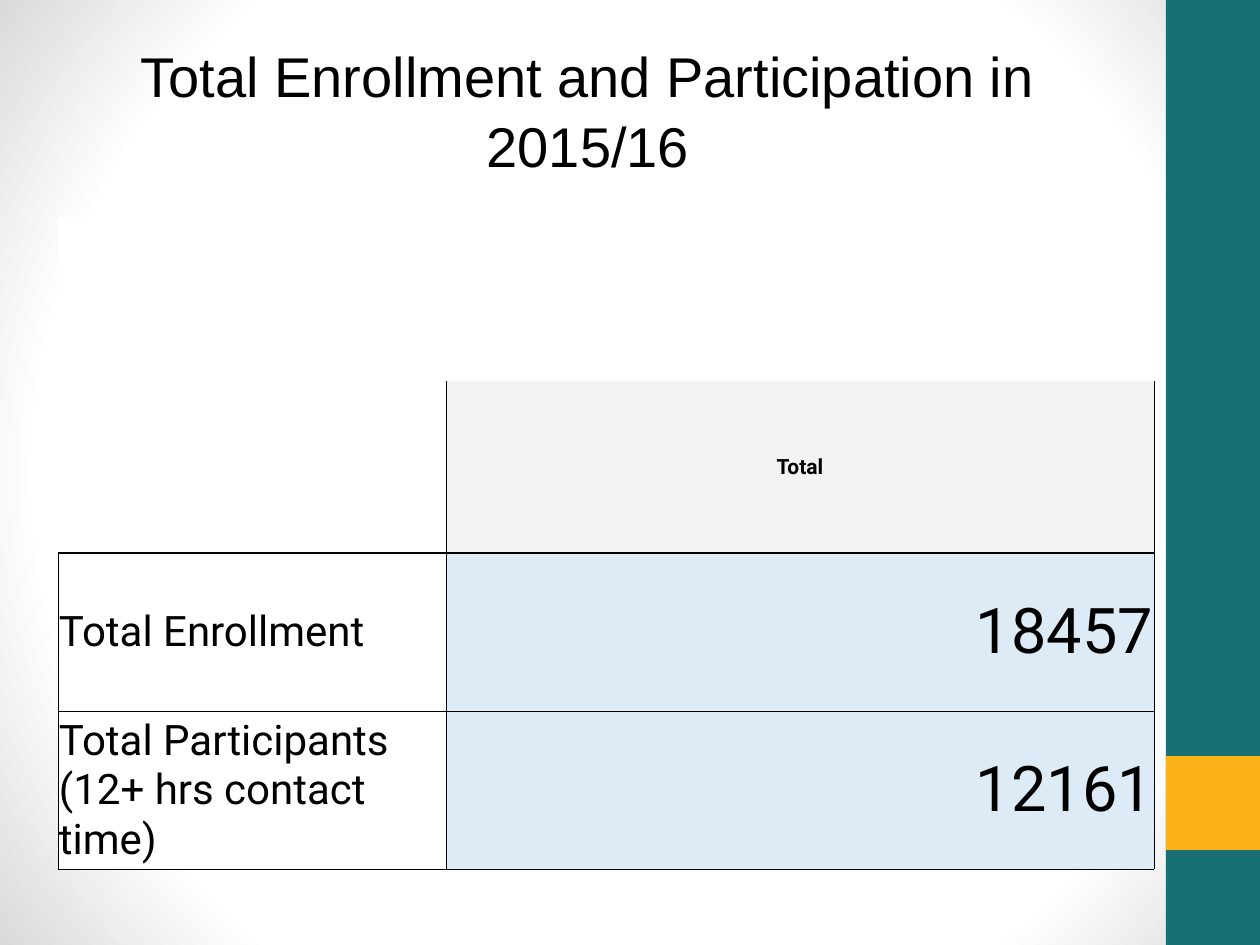
from dataclasses import dataclass

from lxml import etree
from pptx import Presentation
from pptx import util as u
from pptx.dml.color import RGBColor
from pptx.enum import shapes, text
from pptx.oxml import parse_xml
from pptx.oxml.ns import nsdecls, qn

PX = u.Inches(1) // 126
COLORS = {
    "teal": "187072",
    "amber": "FBB319",
    "white": "FFFFFF",
    "edge": "DADADA",
    "black": "000000",
    "header": "F2F2F2",
    "value": "DDEBF7",
}
COLUMN_WIDTHS = (388, 708)
ROW_HEIGHTS = (164, 172, 158, 158)
BORDER_TAGS = {"l": "a:lnL", "r": "a:lnR", "t": "a:lnT", "b": "a:lnB"}
THIN = {"l": 0.5, "r": 0.5, "t": 0.5, "b": 0.5}
UNDER_HEADER = {**THIN, "t": 1}


@dataclass
class Band:
    top: int
    height: int
    color: str


@dataclass
class Entry:
    row: int
    column: int
    color: str
    borders: dict[str, float]
    wording: str = ""
    size: int = 12
    align: text.PP_ALIGN = text.PP_ALIGN.LEFT
    bold: bool = False


BANDS = [Band(0, 945, "teal"), Band(756, 94, "amber")]
ENTRIES = [
    Entry(0, 0, "white", {}),
    Entry(0, 1, "white", {}),
    Entry(1, 0, "white", {"r": 0.5, "b": 1}),
    Entry(1, 1, "header", {"l": 0.5, "r": 0.5, "b": 1}, "Total", 12,
          text.PP_ALIGN.CENTER, True),
    Entry(2, 0, "white", UNDER_HEADER, "Total Enrollment", 24),
    Entry(2, 1, "value", UNDER_HEADER, "18457", 36, text.PP_ALIGN.RIGHT),
    Entry(3, 0, "white", THIN, "Total Participants (12+ hrs contact time)", 24),
    Entry(3, 1, "value", THIN, "12161", 36, text.PP_ALIGN.RIGHT),
]


def rgb(name: str) -> RGBColor:
    return RGBColor.from_string(COLORS[name])


def px(length: int) -> u.Emu:
    return u.Emu(length * PX)


def set_background(slide) -> None:
    stops = "".join(
        f'<a:gs pos="{position * 1000}"><a:srgbClr val="{COLORS[name]}"/></a:gs>'
        for position, name in ((0, "white"), (75, "white"), (100, "edge"))
    )
    background = parse_xml(
        f'<p:bg {nsdecls("p", "a")}><p:bgPr><a:gradFill rotWithShape="1">'
        f'<a:gsLst>{stops}</a:gsLst><a:path path="circle">'
        '<a:fillToRect l="50000" t="50000" r="50000" b="50000"/></a:path>'
        '</a:gradFill><a:effectLst/></p:bgPr></p:bg>'
    )
    slide.element.cSld.insert(0, background)


def draw_band(slide, band: Band) -> None:
    stripe = slide.shapes.add_shape(
        shapes.MSO_SHAPE.RECTANGLE, px(1166), px(band.top), px(94), px(band.height))
    stripe.shadow.inherit = False
    stripe.fill.solid()
    stripe.fill.fore_color.rgb = rgb(band.color)
    stripe.line.fill.background()


def style_paragraph(paragraph, font: str, size: int, align, bold: bool = False) -> None:
    paragraph.alignment = align
    for run in paragraph.runs:
        run.font.name = font
        run.font.size = u.Pt(size)
        run.font.bold = bold
        run.font.color.rgb = rgb("black")


def draw_title(slide) -> None:
    title = slide.shapes.add_textbox(px(63), px(38), px(1050), px(157))
    frame = title.text_frame
    frame.word_wrap = True
    frame.vertical_anchor = text.MSO_ANCHOR.TOP
    frame.margin_top = px(1)
    frame.text = "Total Enrollment and Participation in 2015/16"
    frame.paragraphs[0].line_spacing = 1.04
    style_paragraph(frame.paragraphs[0], "Arial", 32, text.PP_ALIGN.CENTER)


def set_borders(cell, borders: dict[str, float]) -> None:
    properties = cell._tc.get_or_add_tcPr()
    for index, (side, tag) in enumerate(BORDER_TAGS.items()):
        line = etree.Element(qn(tag))
        if side in borders:
            line.set("w", str(u.Pt(borders[side])))
            fill = etree.SubElement(line, qn("a:solidFill"))
            etree.SubElement(fill, qn("a:srgbClr"), val=COLORS["black"])
        else:
            etree.SubElement(line, qn("a:noFill"))
        properties.insert(index, line)


def fill_cell(cell, entry: Entry) -> None:
    cell.fill.solid()
    cell.fill.fore_color.rgb = rgb(entry.color)
    cell.vertical_anchor = text.MSO_ANCHOR.MIDDLE
    cell.margin_left = cell.margin_right = cell.margin_top = px(1)
    cell.margin_bottom = 0
    set_borders(cell, entry.borders)
    if entry.wording:
        cell.text_frame.text = entry.wording
        style_paragraph(cell.text_frame.paragraphs[0], "Roboto", entry.size,
                        entry.align, entry.bold)


def draw_enrollment(slide) -> None:
    enrollment = slide.shapes.add_table(
        len(ROW_HEIGHTS), len(COLUMN_WIDTHS), px(58), px(217),
        px(sum(COLUMN_WIDTHS)), px(sum(ROW_HEIGHTS))).table
    for column, width in zip(enrollment.columns, COLUMN_WIDTHS):
        column.width = px(width)
    for row, height in zip(enrollment.rows, ROW_HEIGHTS):
        row.height = px(height)
    for entry in ENTRIES:
        fill_cell(enrollment.cell(entry.row, entry.column), entry)
    enrollment.cell(0, 0).merge(enrollment.cell(0, 1))


def main() -> None:
    deck = Presentation()
    deck.slide_width, deck.slide_height = px(1260), px(945)
    slide = deck.slides.add_slide(deck.slide_layouts[6])
    set_background(slide)
    for band in BANDS:
        draw_band(slide, band)
    draw_title(slide)
    draw_enrollment(slide)
    deck.save("out.pptx")


if __name__ == "__main__":
    main()
